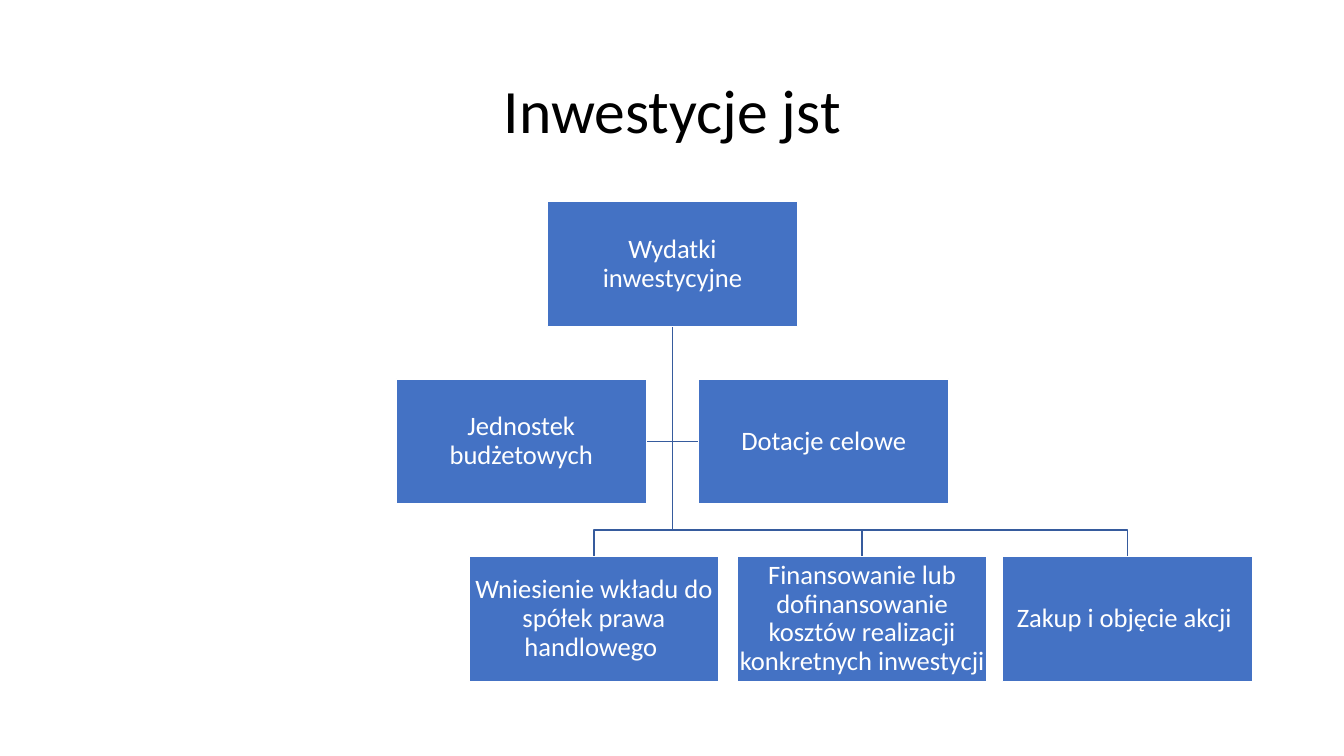
from pptx import Presentation
from pptx import util as u
from pptx.dml.color import RGBColor
from pptx.enum import text

COLOURS = {"box": "4472C4", "edge": "FFFFFF", "branch": "365B9D",
           "title": "000000", "label": "FFFFFF"}
BOX_WIDTH, BOX_HEIGHT = 2.48, 1.24
TOP_ROW, MIDDLE_ROW, BOTTOM_ROW = 2, 3.76, 5.52
TRUNK_X, TRUNK_TOP, BUS_Y = 6.67, TOP_ROW + BOX_HEIGHT, 5.26


def colour(name):
    return RGBColor.from_string(COLOURS[name])


def write(frame, wording, size, colour_name):
    """Fill a text frame with one centred paragraph in the slide's font."""
    frame.word_wrap = True
    frame.vertical_anchor = text.MSO_ANCHOR.MIDDLE
    para = frame.paragraphs[0]
    para.text = wording
    para.alignment = text.PP_ALIGN.CENTER
    para.line_spacing = 0.9
    for span in para.runs:
        for name, value in {"name": "Calibri", "size": u.Pt(size)}.items():
            setattr(span.font, name, value)
        span.font.color.rgb = colour(colour_name)


deck = Presentation()
deck.slide_width, deck.slide_height = u.Inches(13.33), u.Inches(7.5)
page = deck.slides.add_slide(deck.slide_layouts[5])

title = page.shapes.title
title_place = {"left": 0.92, "top": 0.4, "width": 11.5, "height": 1.45}
for name, value in title_place.items():
    setattr(title, name, u.Inches(value))
write(title.text_frame, "Inwestycje jst", 44, "title")

boxes = [
    (5.43, TOP_ROW, "Wydatki\vinwestycyjne"),
    (4.65, BOTTOM_ROW, "Wniesienie wkładu do spółek prawa handlowego "),
    (9.94, BOTTOM_ROW, "Zakup i objęcie akcji\u00a0"),
    (7.31, BOTTOM_ROW, "Finansowanie lub dofinansowanie kosztów realizacji "
                       "konkretnych inwestycji"),
    (3.93, MIDDLE_ROW, "Jednostek budżetowych"),
    (6.93, MIDDLE_ROW, "Dotacje celowe"),
]

# Branches from the top box: sideways to the middle row, down to the bottom row
branches = []
for left, top, wording in boxes[1:]:
    if top == MIDDLE_ROW:
        side = left if left > TRUNK_X else left + BOX_WIDTH
        middle = top + BOX_HEIGHT / 2
        branches.append([(TRUNK_X, middle), (side, middle)])
    else:
        centre = left + BOX_WIDTH / 2
        branches.append([(TRUNK_X, BUS_Y), (centre, BUS_Y), (centre, top)])

for points in branches:
    builder = page.shapes.build_freeform(u.Inches(TRUNK_X), u.Inches(TRUNK_TOP))
    builder.add_line_segments([(u.Inches(x), u.Inches(y)) for x, y in points],
                              close=False)
    branch = builder.convert_to_shape()
    branch.shadow.inherit = False
    branch.fill.background()
    branch.line.color.rgb = colour("branch")
    branch.line.width = u.Pt(1)

for left, top, wording in boxes:
    box = page.shapes.add_shape(1, u.Inches(left), u.Inches(top),
                                u.Inches(BOX_WIDTH), u.Inches(BOX_HEIGHT))
    box.shadow.inherit = False
    box.fill.solid()
    box.fill.fore_color.rgb = colour("box")
    box.line.color.rgb = colour("edge")
    box.line.width = u.Pt(1)
    for side in ("left", "top", "right", "bottom"):
        setattr(box.text_frame, f"margin_{side}", u.Inches(0.01))
    write(box.text_frame, wording, 19, "label")

deck.save("out.pptx")
